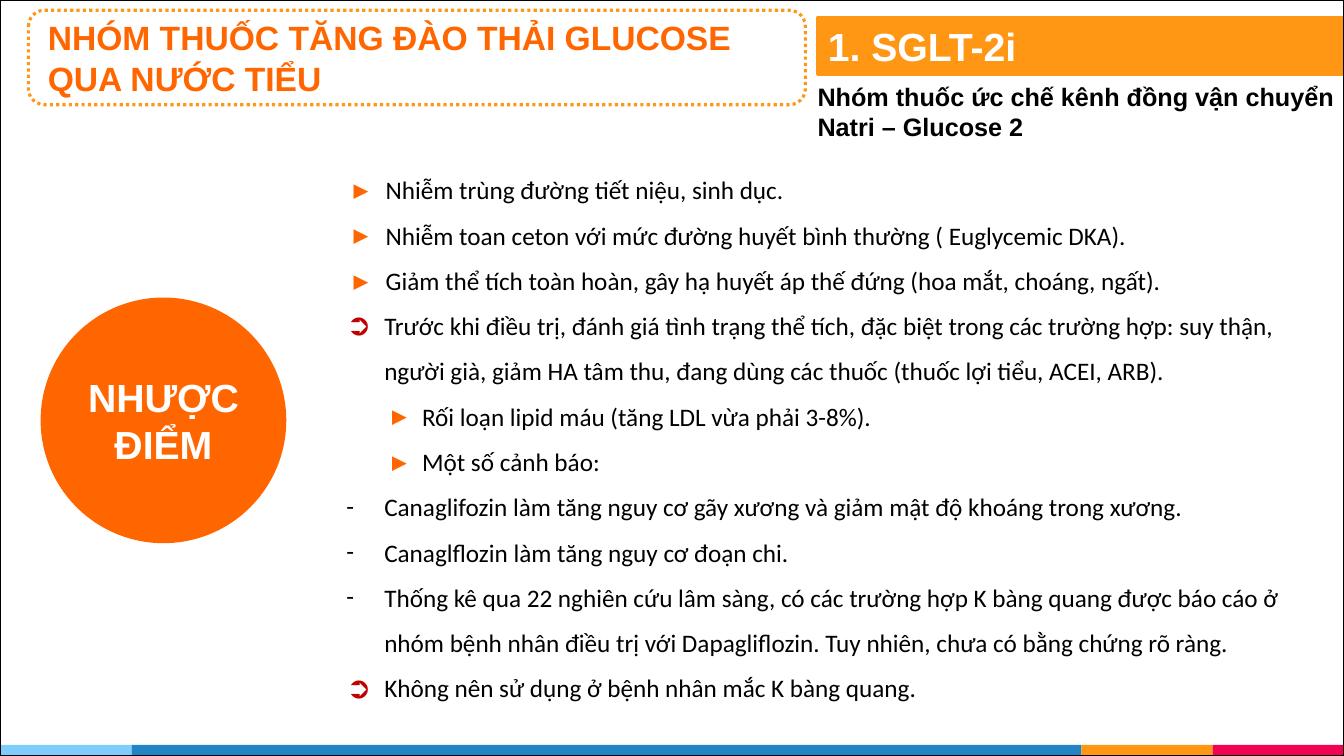
from pptx import Presentation
from pptx.dml.color import RGBColor
from pptx.enum.dml import MSO_LINE
from pptx.enum.shapes import MSO_SHAPE
from pptx.enum.text import MSO_ANCHOR, PP_ALIGN
from pptx.oxml.ns import qn
from pptx.util import Pt
from lxml.etree import SubElement

ORANGE = RGBColor(0xFF, 0x66, 0x00)
AMBER = RGBColor(0xFF, 0x97, 0x15)
PINK = RGBColor(0xF2, 0x02, 0x53)
SKY = RGBColor(0x7E, 0xCE, 0xFD)
BLUE = RGBColor(0x21, 0x85, 0xC5)
DARK_RED = RGBColor(0xC0, 0x00, 0x00)
BLACK = RGBColor(0, 0, 0)
WHITE = RGBColor(0xFF, 0xFF, 0xFF)

PAGE_WIDTH, PAGE_HEIGHT = 960, 540
TITLE = ["NHÓM THUỐC TĂNG ĐÀO THẢI GLUCOSE", "QUA NƯỚC TIỂU"]
DRUG_CLASS = ["1. SGLT-2i"]
DEFINITION = ["Nhóm thuốc ức chế kênh đồng vận chuyển Natri – Glucose 2"]
TOPIC = ["NHƯỢC ĐIỂM"]
DRAWBACKS = [
    ("point", "Nhiễm trùng đường tiết niệu, sinh dục."),
    ("point", "Nhiễm toan ceton với mức đường huyết bình thường ( Euglycemic DKA)."),
    ("point", "Giảm thể tích toàn hoàn, gây hạ huyết áp thế đứng (hoa mắt, choáng, ngất)."),
    ("advice", "Trước khi điều trị, đánh giá tình trạng thể tích, đặc biệt trong các trường hợp: "
               "suy thận, người già, giảm HA tâm thu, đang dùng các thuốc (thuốc lợi tiểu, ACEI, ARB)."),
    ("subpoint", "Rối loạn lipid máu (tăng LDL vừa phải 3-8%)."),
    ("subpoint", "Một số cảnh báo:"),
    ("dash", "Canaglifozin làm tăng nguy cơ gãy xương và giảm mật độ khoáng trong xương."),
    ("dash", "Canaglflozin làm tăng nguy cơ đoạn chi."),
    ("dash", "Thống kê qua 22 nghiên cứu lâm sàng, có các trường hợp K bàng quang được báo cáo ở "
             "nhóm bệnh nhân điều trị với Dapagliflozin. Tuy nhiên, chưa có bằng chứng rõ ràng."),
    ("advice", "Không nên sử dụng ở bệnh nhân mắc K bàng quang."),
]
BULLETS = {
    "point": ("▶", "Noto Sans Mono", ORANGE, 100, 28.5, 28.5),
    "subpoint": ("▶", "Noto Sans Mono", ORANGE, 100, 54.5, 27),
    "advice": ("➲", "Calibri", DARK_RED, 119, 27.5, 27),
    "dash": ("-", "Calibri", BLACK, 100, 27.5, 27),
}
FOOTER = [(SKY, 94), (BLUE, 678.5), (AMBER, 93.75), (PINK, 93.75)]


def add_box(page, kind, left, top, width, height, fill=None, line=None, weight=1):
    box = page.shapes.add_shape(kind, Pt(left), Pt(top), Pt(width), Pt(height))
    box.shadow.inherit = False
    if fill is None:
        box.fill.background()
    else:
        box.fill.solid()
        box.fill.fore_color.rgb = fill
    if line is None:
        box.line.fill.background()
    else:
        box.line.color.rgb = line
        box.line.width = Pt(weight)
    return box


def write(box, texts, size, color, spacing, font="Arial", bold=True,
          align=PP_ALIGN.LEFT, anchor=MSO_ANCHOR.MIDDLE, inset=0):
    frame = box.text_frame
    frame.word_wrap = True
    frame.vertical_anchor = anchor
    frame.margin_left = Pt(inset)
    frame.margin_right = frame.margin_top = frame.margin_bottom = 0
    for index, text in enumerate(texts):
        para = frame.add_paragraph() if index else frame.paragraphs[0]
        para.text = text
        para.alignment = align
        para.line_spacing = Pt(spacing)
        para.font.name = font
        para.font.size = Pt(size)
        para.font.bold = bold
        para.font.color.rgb = color
    return frame.paragraphs


def add_bullet(para, symbol, font, color, percent, indent, hanging):
    properties = para._p.get_or_add_pPr()
    properties.set("marL", str(Pt(indent)))
    properties.set("indent", str(-Pt(hanging)))
    bullet_color = SubElement(properties, qn("a:buClr"))
    SubElement(bullet_color, qn("a:srgbClr"), val=str(color))
    SubElement(properties, qn("a:buSzPct"), val=str(percent * 1000))
    SubElement(properties, qn("a:buFont"), typeface=font)
    SubElement(properties, qn("a:buChar"), char=symbol)
    defaults = properties.find(qn("a:defRPr"))
    if defaults is not None:
        properties.append(defaults)


def add_text(page, left, top, width, height):
    return page.shapes.add_textbox(Pt(left), Pt(top), Pt(width), Pt(height))


def main():
    deck = Presentation()
    deck.slide_width, deck.slide_height = Pt(PAGE_WIDTH), Pt(PAGE_HEIGHT)
    page = deck.slides.add_slide(deck.slide_layouts[6])

    left = 0
    for color, width in FOOTER:
        add_box(page, MSO_SHAPE.RECTANGLE, left, 532, width, 8, color)
        left += width

    title = add_box(page, MSO_SHAPE.ROUNDED_RECTANGLE, 20.3, 7.3, 555, 67.5, line=AMBER, weight=2.28)
    title.adjustments[0] = 0.17
    title.line.dash_style = MSO_LINE.ROUND_DOT
    write(title, TITLE, 24, ORANGE, 29.4, inset=10.5)

    banner = add_box(page, MSO_SHAPE.RECTANGLE, 583.8, 12.2, 376.2, 41, AMBER, AMBER, 2.04)
    write(banner, DRUG_CLASS, 28, WHITE, 33.5, inset=7.5)

    definition = add_text(page, 584, 58, 374, 43)
    write(definition, DEFINITION, 18, BLACK, 21.4, anchor=MSO_ANCHOR.TOP)

    topic = add_box(page, MSO_SHAPE.OVAL, 29, 212.5, 175.5, 175.5, ORANGE)
    write(topic, TOPIC, 28, WHITE, 33.5, align=PP_ALIGN.CENTER)

    body = add_text(page, 247, 114, 681, 388)
    paras = write(body, [text for _, text in DRAWBACKS], 18, BLACK, 32.34,
                  font="Calibri", bold=False, anchor=MSO_ANCHOR.TOP)
    for para, (kind, _) in zip(paras, DRAWBACKS):
        add_bullet(para, *BULLETS[kind])

    add_box(page, MSO_SHAPE.RECTANGLE, 0, 0, PAGE_WIDTH, PAGE_HEIGHT, line=BLACK, weight=1.92)
    deck.save("out.pptx")


if __name__ == "__main__":
    main()
